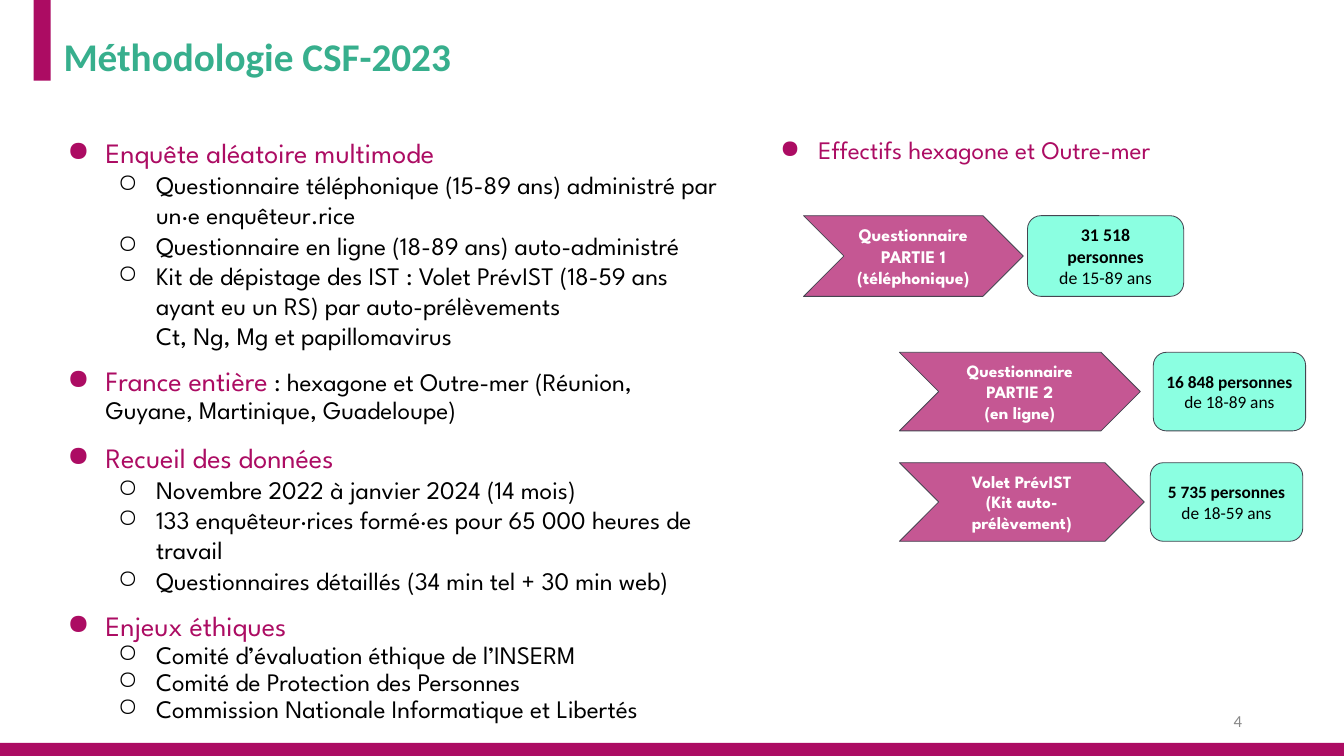
from lxml import etree
from pptx import Presentation
from pptx import util as u
from pptx.dml.color import RGBColor
from pptx.enum import shapes, text
from pptx.oxml import ns

PINK = RGBColor(0xAC, 0x0C, 0x63)
GREEN = RGBColor(0x37, 0xAF, 0x8D)
MINT = RGBColor(0x8B, 0xFF, 0xE1)
OUTLINE = RGBColor(0x45, 0x45, 0x51)
GREY = RGBColor(0x88, 0x88, 0x88)
BLACK = RGBColor(0, 0, 0)
WHITE = RGBColor(255, 255, 255)
SPARTAN, CALIBRI = "League Spartan", "Calibri"

SLIDE_W, SLIDE_H = u.Inches(13.33), u.Inches(7.5)

# Bullet character, bullet colour, left margin and hanging indent in inches
HEAD = ("●", PINK, 0.5, -0.38)
ITEM = ("○", BLACK, 1, -0.38)
PLAIN = (None, None, 1, 0)
HEAD_FONT = dict(size=20, name=SPARTAN, color=PINK)
ITEM_FONT = dict(size=18, name=SPARTAN, color=BLACK)

# Section title, rest of its line, items, space before, title and item line spacing
SECTIONS = [
    ("Enquête aléatoire multimode", "", [
        (ITEM, "Questionnaire téléphonique (15-89 ans) administré par un·e enquêteur.rice"),
        (ITEM, "Questionnaire en ligne (18-89 ans) auto-administré"),
        (ITEM, "Kit de dépistage des IST : Volet PrévIST (18-59 ans ayant eu un RS) "
               "par auto-prélèvements"),
        (PLAIN, "Ct, Ng, Mg et papillomavirus"),
    ], 0, 1, 1),
    ("France entière", " : hexagone et Outre-mer (Réunion, Guyane, Martinique, Guadeloupe)",
     [], 12, 0.9, 1),
    ("Recueil des données", "", [
        (ITEM, "Novembre 2022 à janvier 2024 (14 mois)"),
        (ITEM, "133 enquêteur·rices formé·es pour 65 000 heures de travail"),
        (ITEM, "Questionnaires détaillés (34 min tel + 30 min web)"),
    ], 11, 1, 1),
    ("Enjeux éthiques", "", [
        (ITEM, "Comité d’évaluation éthique de l’INSERM"),
        (ITEM, "Comité de Protection des Personnes"),
        (ITEM, "Commission Nationale Informatique et Libertés"),
    ], 12, 0.9, 0.9),
]

# Row box in percent of the slide, shares of chevron and count, font size, texts
FLOW = [
    ((59.79, 28.53, 28.28, 10.67), 0.578, 0.411, 12.7,
     ["Questionnaire PARTIE 1", "(téléphonique)"], ["31 518\vpersonnes", "de 15-89 ans"]),
    ((66.92, 46.6, 30.23, 10.4), 0.593, 0.375, 12.4,
     ["Questionnaire PARTIE 2", "(en ligne)"], ["16 848 personnes", "de 18-89 ans"]),
    ((66.92, 61.2, 30.01, 10.4), 0.607, 0.378, 12.4,
     ["Volet PrévIST", "(Kit auto-prélèvement)"], ["5 735 personnes", "de 18-59 ans"]),
]


def place(box):
    """Turn a box in percent of the slide into lengths."""
    left, top, width, height = box
    return [u.Emu(int(share * side / 100)) for share, side in
            ((left, SLIDE_W), (top, SLIDE_H), (width, SLIDE_W), (height, SLIDE_H))]


def set_frame(frame, inset_x, inset_y, anchor=text.MSO_ANCHOR.TOP):
    settings = dict(word_wrap=True, auto_size=text.MSO_AUTO_SIZE.NONE, vertical_anchor=anchor,
                    margin_left=u.Inches(inset_x), margin_right=u.Inches(inset_x),
                    margin_top=u.Inches(inset_y), margin_bottom=u.Inches(inset_y))
    for name, value in settings.items():
        setattr(frame, name, value)


def add_text_box(slide, box, inset_y=0.05, anchor=text.MSO_ANCHOR.TOP):
    frame = slide.shapes.add_textbox(*place(box)).text_frame
    set_frame(frame, 0.1, inset_y, anchor)
    return frame


def next_paragraph(frame):
    first = frame.paragraphs[0]
    return frame.add_paragraph() if first.runs else first


def style_run(run, size, name, color, bold=False):
    for key, value in dict(size=u.Pt(size), name=name, bold=bold).items():
        setattr(run.font, key, value)
    run.font.color.rgb = color


def add_run(paragraph, words, style):
    run = paragraph.add_run()
    run.text = words
    style_run(run, **style)


def set_bullet(paragraph, mark, color, margin, indent):
    props = paragraph._p.get_or_add_pPr()
    props.set("marL", str(u.Inches(margin)))
    props.set("indent", str(u.Inches(indent)))
    if mark:
        tint = etree.SubElement(props, ns.qn("a:buClr"))
        etree.SubElement(tint, ns.qn("a:srgbClr"), val=str(color))
        etree.SubElement(props, ns.qn("a:buChar"), char=mark)


def add_line(frame, level, words, style, spacing=1, before=0):
    paragraph = next_paragraph(frame)
    set_bullet(paragraph, *level)
    paragraph.line_spacing = spacing
    paragraph.space_before = u.Pt(before)
    add_run(paragraph, words, style)
    return paragraph


def add_panel(slide, kind, box, fill, line_width=None):
    panel = slide.shapes.add_shape(kind, *place(box))
    panel.shadow.inherit = False
    panel.fill.solid()
    panel.fill.fore_color.rgb = fill
    if line_width:
        panel.line.color.rgb = OUTLINE
        panel.line.width = u.Pt(line_width)
    else:
        panel.line.fill.background()
    return panel


def add_bars(slide):
    for box in ((2.5, 0, 1.28, 10.67), (0, 98.27, 100, 1.73)):
        add_panel(slide, shapes.MSO_SHAPE.RECTANGLE, box, PINK)


def add_title(slide, box):
    title = slide.shapes.title
    title.left, title.top, title.width, title.height = place(box)
    set_frame(title.text_frame, 0.13, 0.13)
    heading = title.text_frame.paragraphs[0]
    heading.alignment = text.PP_ALIGN.LEFT
    add_run(heading, "Méthodologie CSF-2023", dict(size=28, name=CALIBRI, color=GREEN, bold=True))


def add_sections(slide, box):
    frame = add_text_box(slide, box)
    for title, rest, items, before, title_spacing, item_spacing in SECTIONS:
        heading = add_line(frame, HEAD, title, HEAD_FONT, title_spacing, before)
        if rest:
            add_run(heading, rest, ITEM_FONT)
        for level, words in items:
            add_line(frame, level, words, ITEM_FONT, item_spacing)


def add_panel_text(panel, lines, styles):
    set_frame(panel.text_frame, 0.08, 0.08, text.MSO_ANCHOR.MIDDLE)
    for words, style in zip(lines, styles):
        paragraph = next_paragraph(panel.text_frame)
        paragraph.text = words
        paragraph.alignment = text.PP_ALIGN.CENTER
        for run in paragraph.runs:
            style_run(run, **style)


def add_flow_row(slide, box, step_share, count_share, size, step, count):
    """Place a chevron at the left and its head count at the right of the box."""
    left, top, width, height = box
    chevron = add_panel(slide, shapes.MSO_SHAPE.CHEVRON,
                        (left, top, width * step_share, height), PINK, 0.6)
    tint = chevron.fill._xPr.find(".//" + ns.qn("a:srgbClr"))
    etree.SubElement(tint, ns.qn("a:alpha"), val="69000")
    add_panel_text(chevron, step, [dict(size=size, name=SPARTAN, color=WHITE, bold=True)] * 2)

    count_width = width * count_share
    people = add_panel(slide, shapes.MSO_SHAPE.ROUNDED_RECTANGLE,
                       (left + width - count_width, top, count_width, height), MINT, 0.6)
    add_panel_text(people, count, [dict(size=size, name=CALIBRI, color=BLACK, bold=bold)
                                   for bold in (True, False)])


def add_head_counts(slide, box):
    frame = add_text_box(slide, box, inset_y=0.1)
    add_line(frame, HEAD, "Effectifs hexagone et Outre-mer", dict(HEAD_FONT, size=18), 0.9)
    for row in FLOW:
        add_flow_row(slide, *row)


def add_page_number(slide, box):
    number = add_text_box(slide, box, anchor=text.MSO_ANCHOR.MIDDLE).paragraphs[0]
    number.alignment = text.PP_ALIGN.RIGHT
    add_run(number, "4", dict(size=12, name=CALIBRI, color=GREY))


def main():
    deck = Presentation()
    deck.slide_width, deck.slide_height = SLIDE_W, SLIDE_H
    slide = deck.slides.add_slide(deck.slide_layouts[5])
    add_bars(slide)
    add_page_number(slide, (70.67, 92.67, 22.5, 5.33))
    add_sections(slide, (3.38, 17.33, 51.16, 76.8))
    add_title(slide, (3.75, 2.53, 79.44, 10.67))
    add_head_counts(slide, (56.41, 16.93, 33.08, 6.27))
    deck.save("out.pptx")


if __name__ == "__main__":
    main()
